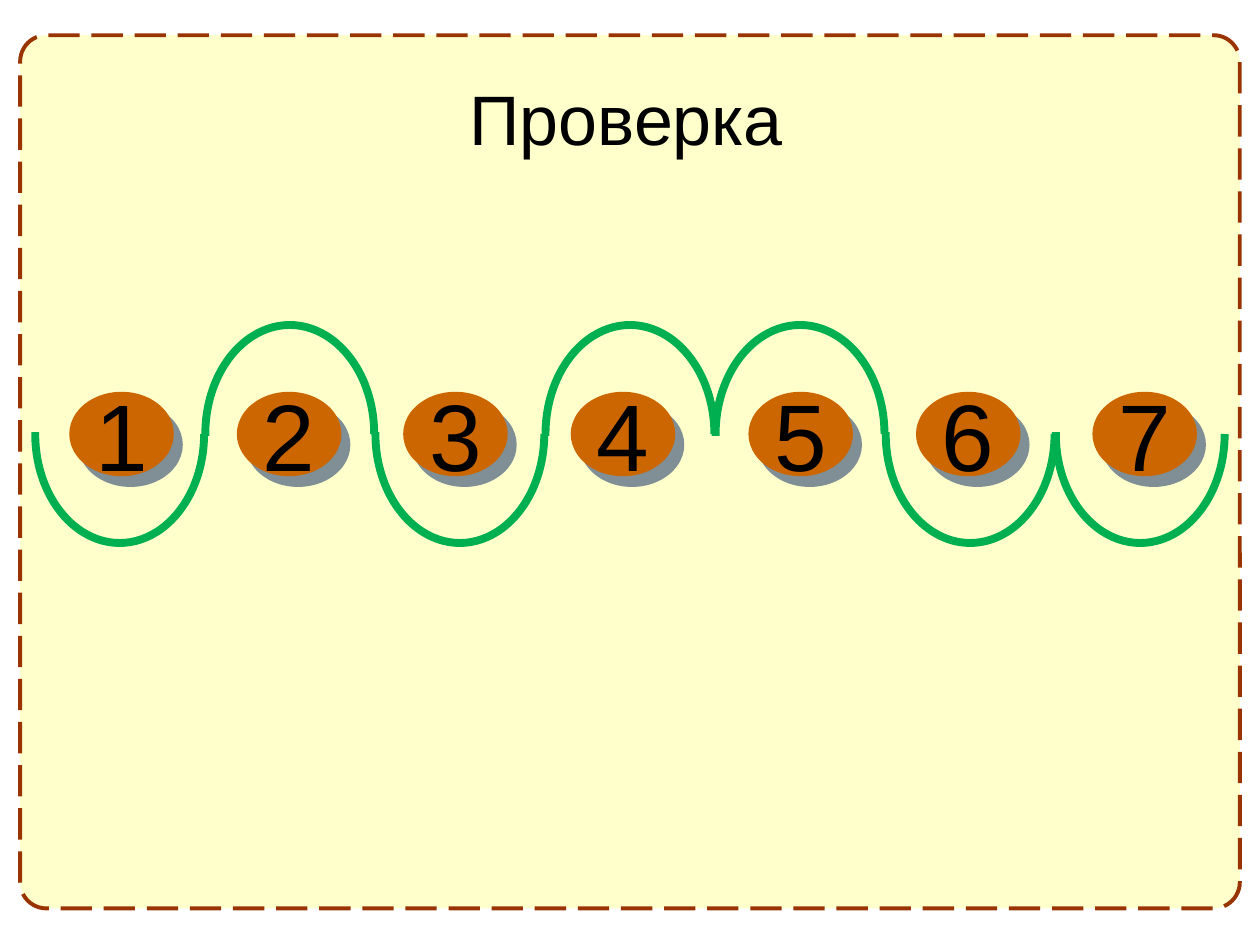
from lxml import etree
from pptx import Presentation
from pptx.dml.color import RGBColor
from pptx.enum.dml import MSO_LINE
from pptx.enum.shapes import MSO_SHAPE
from pptx.enum.text import MSO_ANCHOR, PP_ALIGN
from pptx.oxml.ns import qn
from pptx.util import Inches, Pt

ROUND_RECT, OVAL, ARC = MSO_SHAPE.ROUNDED_RECTANGLE, MSO_SHAPE.OVAL, MSO_SHAPE.ARC
LONG_DASH = MSO_LINE.LONG_DASH
MIDDLE, CENTER = MSO_ANCHOR.MIDDLE, PP_ALIGN.CENTER

COLORS = {"paper": "FFFFCC", "border": "993300", "oval": "CC6600",
          "shadow": "002060", "wave": "00B050", "text": "000000"}
TITLE = "Проверка"
# label, left edge of its oval, side of the wave
STEPS = [
    ("1", 0.55, "below"),
    ("2", 1.88, "above"),
    ("3", 3.20, "below"),
    ("4", 4.53, "above"),
    ("5", 5.94, "above"),
    ("6", 7.27, "below"),
    ("7", 8.67, "below"),
]
OVAL_TOP, OVAL_W, OVAL_H = 3.11, 0.83, 0.67
WAVE_LEFT, WAVE_TOP, WAVE_STEP = 0.28, 2.58, 1.35
WAVE_W, WAVE_H = 1.34, 1.73
WAVE_START = 107.2  # arc start angle, a little past the half turn


def color(name):
    return RGBColor.from_string(COLORS[name])


def add_shape(shapes, kind, left, top, width, height, fill=None, line=None, line_width=0):
    s = shapes.add_shape(kind, Inches(left), Inches(top), Inches(width), Inches(height))
    s.shadow.inherit = False
    if fill:
        s.fill.solid()
        s.fill.fore_color.rgb = color(fill)
    else:
        s.fill.background()
    if line:
        s.line.color.rgb = color(line)
        s.line.width = Pt(line_width)
    else:
        s.line.fill.background()
    return s


def write(s, text, size):
    tf = s.text_frame
    tf.vertical_anchor = MIDDLE
    p = tf.paragraphs[0]
    p.text = text
    p.alignment = CENTER
    p.font.name = "Arial"
    p.font.size = Pt(size)
    p.font.color.rgb = color("text")


def add_hard_shadow(s):
    """Half-transparent shadow without blur, 8 pt away at 50 degrees."""
    effects = s._element.spPr.find(qn("a:effectLst"))
    shadow = etree.SubElement(effects, qn("a:outerShdw"), blurRad="0", dist=str(Pt(8)),
                              dir=str(50 * 60000), algn="ctr", rotWithShape="0")
    tint = etree.SubElement(shadow, qn("a:srgbClr"), val=COLORS["shadow"])
    etree.SubElement(tint, qn("a:alpha"), val="50000")


def main():
    prs = Presentation()
    prs.slide_width, prs.slide_height = Inches(10), Inches(7.5)
    slide = prs.slides.add_slide(prs.slide_layouts[5])
    shapes = slide.shapes

    frame = add_shape(shapes, ROUND_RECT, 0.16, 0.28, 9.68, 6.93, "paper", "border", 2.25)
    frame.adjustments[0] = 0.03
    frame.line.dash_style = LONG_DASH
    title = shapes.title
    title._element.addprevious(frame._element)  # the frame lies behind the title

    title.left, title.top = Inches(0.47), Inches(0.31)
    title.width, title.height = Inches(9), Inches(1.25)
    write(title, TITLE, 40)

    for label, left, _ in STEPS:
        oval = add_shape(shapes, OVAL, left, OVAL_TOP, OVAL_W, OVAL_H, "oval")
        add_hard_shadow(oval)
        write(oval, label, 54)
        oval.text_frame.word_wrap = False

    wave = shapes.add_group_shape()
    for i, (_, _, side) in enumerate(STEPS):
        arc = add_shape(wave.shapes, ARC, WAVE_LEFT + i * WAVE_STEP, WAVE_TOP,
                        WAVE_W, WAVE_H, line="wave", line_width=4.5)
        arc.adjustments[0] = WAVE_START
        arc.adjustments[1] = 0
        if side == "below":
            arc._element.spPr.xfrm.set("flipV", "1")

    prs.save("out.pptx")


if __name__ == "__main__":
    main()
